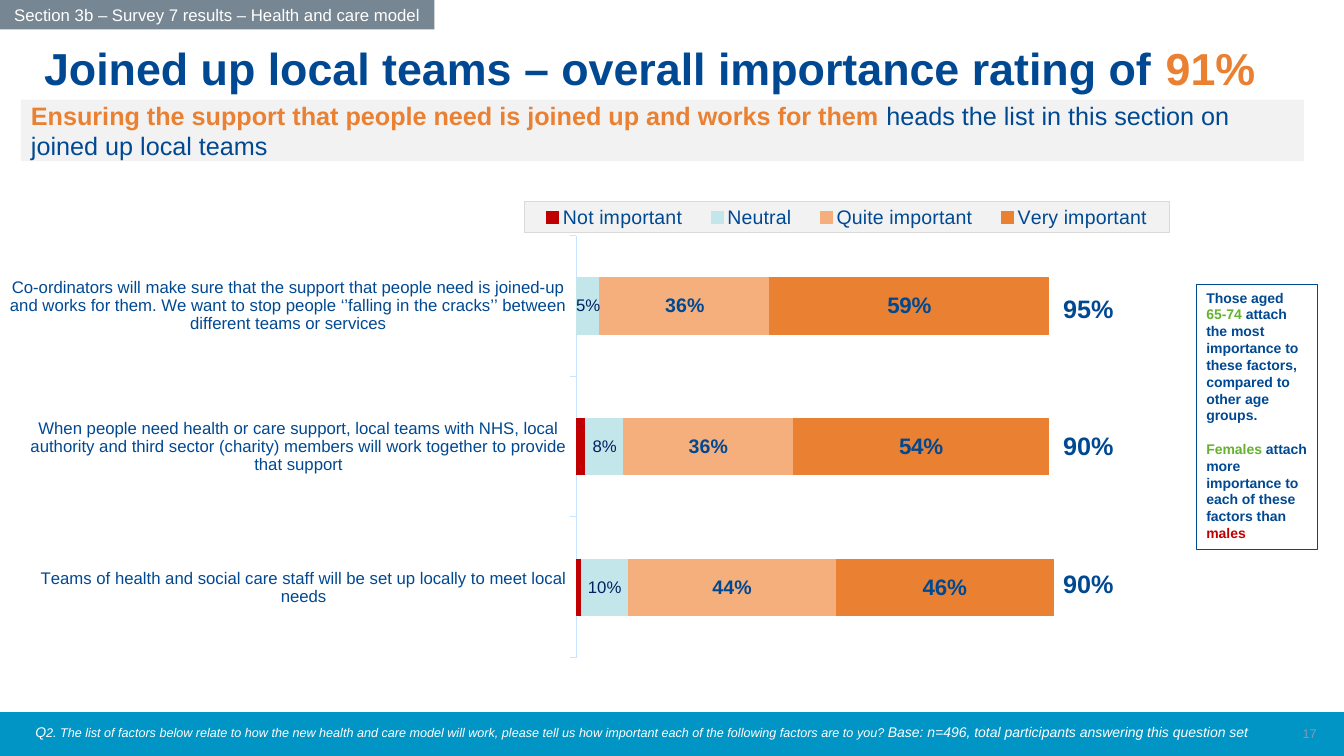
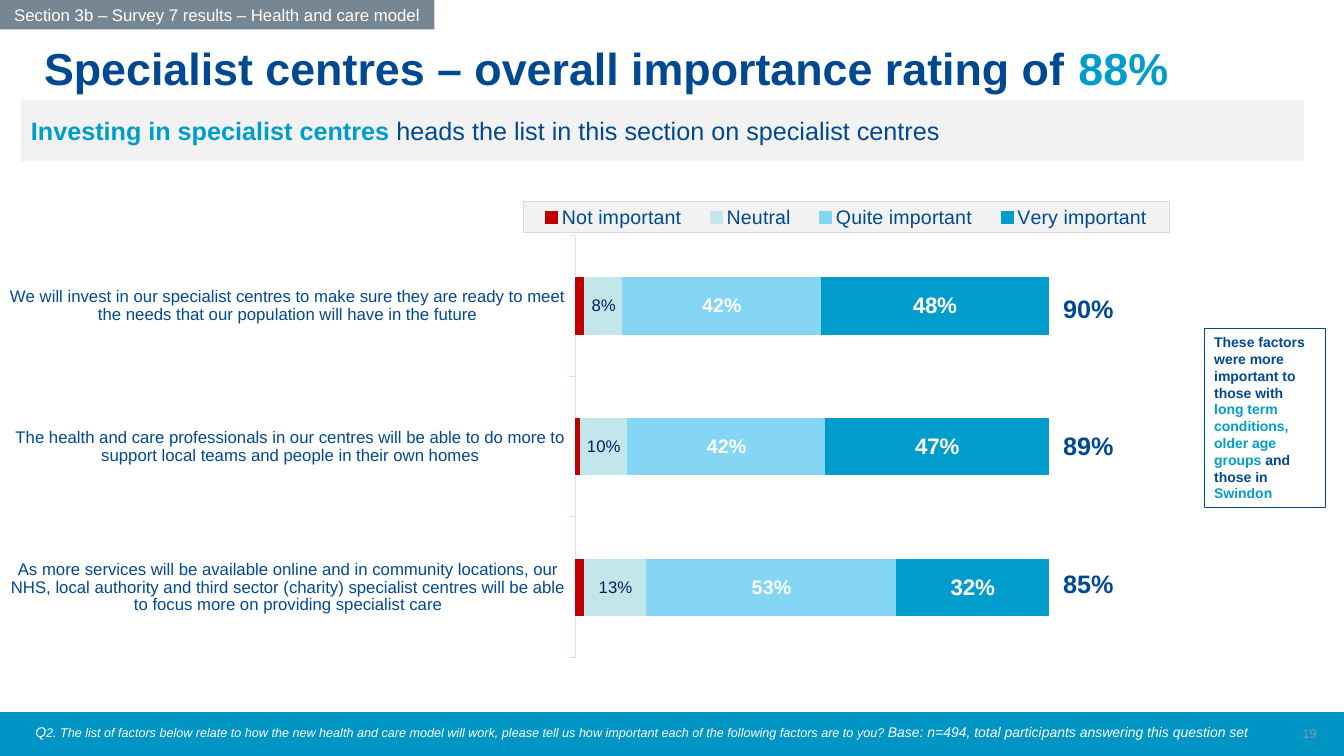
from dataclasses import dataclass
from typing import Optional

from pptx import Presentation
from pptx import util as u
from pptx.chart import data as chart_data
from pptx.chart.chart import Chart
from pptx.dml.color import RGBColor
from pptx.enum import chart as charts, shapes, text
from pptx.oxml import parse_xml
from pptx.oxml.ns import nsdecls
from pptx.slide import Slide

FONT = "Arial"
NAVY, WHITE, RED, GREEN = "004992", "FFFFFF", "C00000", "64B22D"
ORANGE, PEACH, BLUE, SKY = "EA8132", "F4AF7C", "009DCC", "85D6F4"
BAND, SLATE, PALE, MINT = "0095C4", "768692", "F2F2F2", "C3E6EB"
AXIS, LABEL, MUTED, FRAME = "C8E4FF", "002060", "8C95B6", "D9D9D9"
SECTION = "Section 3b – Survey 7 results – Health and care model"
QUESTION = (
    "2. The list of factors below relate to how the new health and care model will work, "
    "please tell us how important each of the following factors are to you? "
)
SCORE_LEFT, SCORE_TOP, SCORE_STEP = 26.54, 7.26, 3.47


@dataclass
class Span:
    words: str
    color: str = NAVY
    size: float = 10
    bold: bool = False
    italic: bool = False


@dataclass
class Area:
    left: float
    top: float
    width: float
    height: float


@dataclass
class Factor:
    label: str
    shares: tuple[float, float, float, float]

    @property
    def score(self) -> str:
        return f"{sum(self.shares[2:]):.0%}"


@dataclass
class Series:
    name: str
    color: str
    label_color: Optional[str] = None
    label_size: float = 12
    label_bold: bool = True


@dataclass
class Topic:
    number: int
    title: str
    rating: str
    lead: str
    rest: str
    accent: str
    tint: str
    label_color: str
    base: int
    factors: list[Factor]
    note_area: Area
    note: list[list[Span]]


def rgb(value: str) -> RGBColor:
    return RGBColor.from_string(value)


def style_font(font, *, color: str, size: float, bold: bool = False, italic: bool = False) -> None:
    font.name = FONT
    font.size = u.Pt(size)
    font.bold = bold
    font.italic = italic
    font.color.rgb = rgb(color)


def add_box(
    page: Slide,
    area: Area,
    paragraphs: list[list[Span]],
    *,
    fill: Optional[str] = None,
    line: Optional[str] = None,
    align=text.PP_ALIGN.LEFT,
    anchor=text.MSO_ANCHOR.TOP,
    wrap: bool = True,
    spacing: float = 1.0,
    gap: float = 0,
) -> None:
    place = [u.Cm(n) for n in (area.left, area.top, area.width, area.height)]
    if fill:
        box = page.shapes.add_shape(shapes.MSO_SHAPE.RECTANGLE, *place)
        box.shadow.inherit = False
        box.fill.solid()
        box.fill.fore_color.rgb = rgb(fill)
        if line:
            box.line.color.rgb = rgb(line)
            box.line.width = u.Pt(0.75)
        else:
            box.line.fill.background()
    else:
        box = page.shapes.add_textbox(*place)
    frame = box.text_frame
    frame.word_wrap = wrap
    frame.vertical_anchor = anchor
    for index, spans in enumerate(paragraphs):
        para = frame.add_paragraph() if index else frame.paragraphs[0]
        para.alignment = align
        para.line_spacing = spacing
        if index:
            para.space_before = u.Pt(gap)
        for span in spans:
            run = para.add_run()
            run.text = span.words
            style_font(run.font, color=span.color, size=span.size, bold=span.bold, italic=span.italic)


def manual_layout(left: float, top: float, width: float, height: float, target: str = ""):
    inner = f'<c:layoutTarget val="{target}"/>' if target else ""
    return parse_xml(
        f'<c:layout {nsdecls("c")}><c:manualLayout>{inner}'
        '<c:xMode val="edge"/><c:yMode val="edge"/>'
        f'<c:x val="{left}"/><c:y val="{top}"/><c:w val="{width}"/><c:h val="{height}"/>'
        "</c:manualLayout></c:layout>"
    )


def place_chart_parts(chart: Chart) -> None:
    plot_area = chart.element.xpath("c:chart/c:plotArea")[0]
    legend = chart.element.xpath("c:chart/c:legend")[0]
    for part in (plot_area, legend):
        for old in part.xpath("c:layout"):
            part.remove(old)
    plot_area.insert(0, manual_layout(0.487, 0.121, 0.49, 0.846, "inner"))
    legend.xpath("c:legendPos")[0].addnext(manual_layout(0.442, 0.053, 0.558, 0.062))
    legend.xpath("c:txPr")[0].addprevious(parse_xml(
        f'<c:spPr {nsdecls("c", "a")}><a:solidFill><a:srgbClr val="{PALE}"/></a:solidFill>'
        f'<a:ln w="9525"><a:solidFill><a:srgbClr val="{FRAME}"/></a:solidFill></a:ln></c:spPr>'
    ))


def add_rating_chart(page: Slide, topic: Topic) -> None:
    styles = [
        Series("Not important", RED),
        Series("Neutral", MINT, LABEL, 12, False),
        Series("Quite important", topic.tint, topic.label_color, 14),
        Series("Very important", topic.accent, topic.label_color, 16),
    ]
    rows = topic.factors[::-1]
    data = chart_data.CategoryChartData(number_format="0%")
    data.categories = [row.label for row in rows]
    for index, style in enumerate(styles):
        data.add_series(style.name, [row.shares[index] for row in rows])
    chart = page.shapes.add_chart(
        charts.XL_CHART_TYPE.BAR_STACKED, u.Cm(0.25), u.Cm(4.42), u.Cm(29.24), u.Cm(12.57), data
    ).chart
    style_font(chart.font, color=NAVY, size=10)
    chart.has_title = False
    chart.has_legend = True
    chart.legend.position = charts.XL_LEGEND_POSITION.TOP
    chart.legend.include_in_layout = False
    style_font(chart.legend.font, color=NAVY, size=14)

    values = chart.value_axis
    values.minimum_scale, values.maximum_scale = 0, 1.2
    values.has_major_gridlines = False
    values.visible = False
    categories = chart.category_axis
    categories.major_tick_mark = charts.XL_TICK_MARK.OUTSIDE
    categories.format.line.color.rgb = rgb(AXIS)
    categories.format.line.width = u.Pt(0.75)
    style_font(categories.tick_labels.font, color=NAVY, size=12)

    plot = chart.plots[0]
    plot.gap_width, plot.overlap = 150, 100
    plot.vary_by_categories = False
    for series, style in zip(plot.series, styles):
        series.format.fill.solid()
        series.format.fill.fore_color.rgb = rgb(style.color)
        series.format.line.color.rgb = rgb(style.color)
        series.format.line.width = u.Pt(0.75)
        if style.label_color:
            labels = series.data_labels
            labels.show_value = True
            labels.number_format, labels.number_format_is_linked = "0%", False
            labels.position = charts.XL_LABEL_POSITION.CENTER
            style_font(labels.font, color=style.label_color, size=style.label_size, bold=style.label_bold)
    place_chart_parts(chart)


def add_topic(deck, topic: Topic) -> None:
    page = deck.slides.add_slide(deck.slide_layouts[6])
    middle = text.MSO_ANCHOR.MIDDLE
    add_box(page, Area(0, 17.96, 33.87, 1.09), [], fill=BAND, line=BAND)
    add_box(page, Area(25.81, 17.98, 7.62, 1.02), [[Span(str(topic.number), MUTED, 9)]],
            align=text.PP_ALIGN.RIGHT, anchor=middle)
    add_box(page, Area(0.86, 0.81, 31.7, 1.63),
            [[Span(topic.title, NAVY, 32, True), Span(topic.rating, topic.accent, 32, True)]],
            spacing=1.07)
    add_box(page, Area(0.53, 2.51, 32.33, 1.55),
            [[Span(topic.lead, topic.accent, 18, True), Span(topic.rest, NAVY, 18)]],
            fill=PALE, anchor=middle)
    add_rating_chart(page, topic)
    add_box(page, Area(0, 0, 10.95, 0.74), [[Span(SECTION, WHITE, 12)]],
            fill=SLATE, align=text.PP_ALIGN.CENTER, anchor=middle)
    base = f"Base: n={topic.base}, total participants answering this question set"
    add_box(page, Area(0.64, 18.11, 31.9, 1.12), [[
        Span("Q", WHITE, 10, italic=True),
        Span(QUESTION, WHITE, 9, italic=True),
        Span(base, WHITE, 10, italic=True),
    ]])
    for index, factor in enumerate(topic.factors):
        add_box(page, Area(SCORE_LEFT, SCORE_TOP + index * SCORE_STEP, 1.8, 1.02),
                [[Span(factor.score, NAVY, 18, True)]], wrap=False)
    add_box(page, topic.note_area, topic.note, fill=WHITE, line=NAVY, gap=12)


TOPICS = [
    Topic(
        17, "Joined up local teams – overall importance rating of ", "91%",
        "Ensuring the support that people need is joined up and works for them ",
        "heads the list in this section on joined up local teams",
        ORANGE, PEACH, NAVY, 496,
        [
            Factor("Co-ordinators will make sure that the support that people need is joined-up and works "
                   "for them. We want to stop people ‘’falling in the cracks’’ between different teams "
                   "or services", (0, 0.05, 0.36, 0.59)),
            Factor("When people need health or care support, local teams with NHS, local authority and third "
                   "sector (charity) members will work together to provide that support",
                   (0.02, 0.08, 0.36, 0.54)),
            Factor("Teams of health and social care staff will be set up locally to meet local needs",
                   (0.01, 0.1, 0.44, 0.46)),
        ],
        Area(30.15, 7.16, 3.05, 6.68),
        [
            [Span("Those aged ", bold=True), Span("65-74", GREEN, bold=True),
             Span(" attach the most importance to these factors, compared to other age groups.", bold=True)],
            [Span("Females", GREEN, bold=True),
             Span(" attach more importance to each of these factors than ", bold=True),
             Span("males", RED, bold=True)],
        ],
    ),
    Topic(
        19, "Specialist centres – overall importance rating of ", "88%",
        "Investing in specialist centres ",
        "heads the list in this section on specialist centres",
        BLUE, SKY, WHITE, 494,
        [
            Factor("We will invest in our specialist centres to make sure they are ready to meet the needs "
                   "that our population will have in the future", (0.02, 0.08, 0.42, 0.48)),
            Factor("The health and care professionals in our centres will be able to do more to support "
                   "local teams and people in their own homes", (0.01, 0.1, 0.42, 0.47)),
            Factor("As more services will be available online and in community locations, our NHS, local "
                   "authority and third sector (charity) specialist centres will be able to focus more on "
                   "providing specialist care", (0.02, 0.13, 0.53, 0.32)),
        ],
        Area(30.35, 8.28, 3.05, 4.52),
        [[Span("These factors were more important to those with ", bold=True),
          Span("long term conditions, older age groups ", BLUE, bold=True),
          Span("and those in ", bold=True), Span("Swindon", BLUE, bold=True)]],
    ),
]


def main() -> None:
    deck = Presentation()
    deck.slide_width, deck.slide_height = u.Cm(33.87), u.Cm(19.05)
    for topic in TOPICS:
        add_topic(deck, topic)
    deck.save("out.pptx")


if __name__ == "__main__":
    main()
